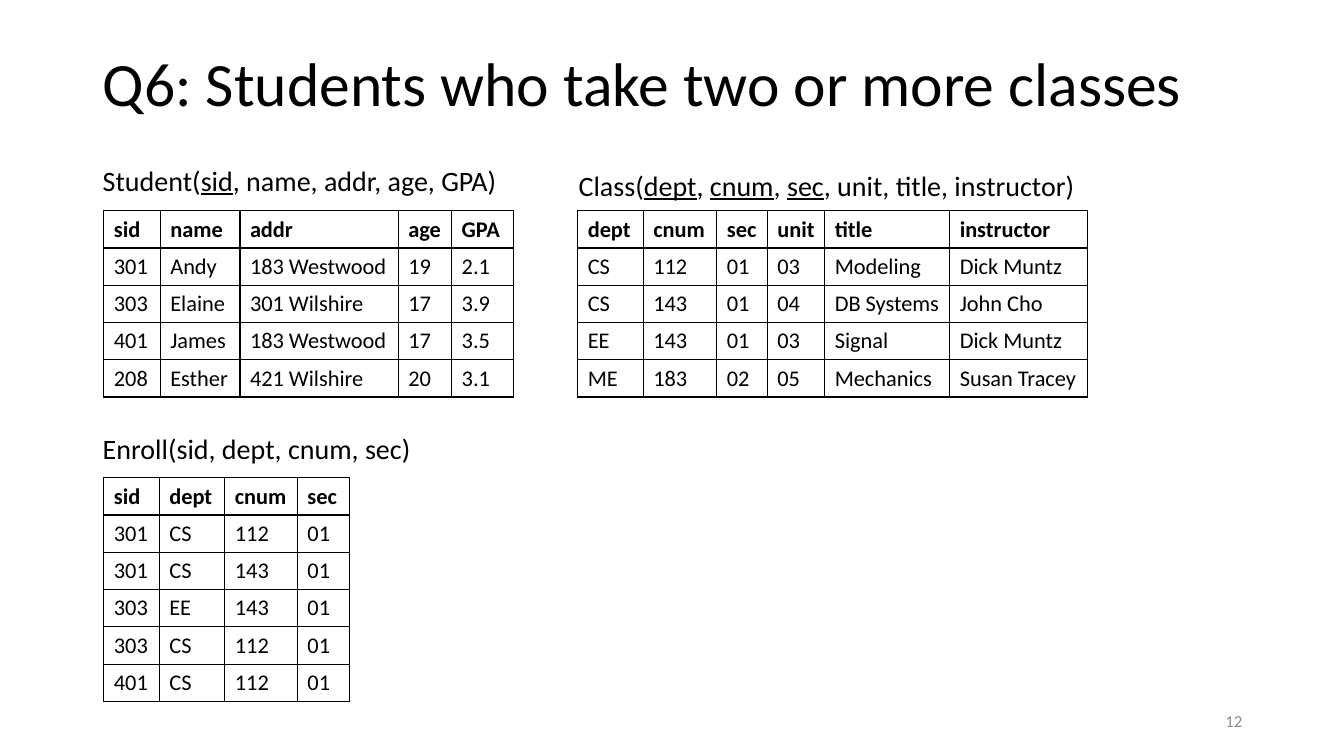
import pptx
import pptx.dml.color
import pptx.enum.text
import pptx.oxml
import pptx.oxml.ns
import pptx.util

PX = 9144  # EMU per px, 100 px to the inch
FONT = "Calibri"
COLORS = {"text": "000000", "border": "000000", "number": "8C8C8C"}
ROW_HEIGHT = 37
ALIGN = pptx.enum.text.PP_ALIGN
MIDDLE = pptx.enum.text.MSO_ANCHOR.MIDDLE

STUDENTS = [
    ("301", "Andy", "183 Westwood", "19", "2.1"),
    ("303", "Elaine", "301 Wilshire", "17", "3.9"),
    ("401", "James", "183 Westwood", "17", "3.5"),
    ("208", "Esther", "421 Wilshire", "20", "3.1"),
]
CLASSES = [
    ("CS", "112", "01", "03", "Modeling", "Dick Muntz"),
    ("CS", "143", "01", "04", "DB Systems", "John Cho"),
    ("EE", "143", "01", "03", "Signal", "Dick Muntz"),
    ("ME", "183", "02", "05", "Mechanics", "Susan Tracey"),
]
ENROLLMENTS = [
    ("301", "CS", "112", "01"),
    ("301", "CS", "143", "01"),
    ("303", "EE", "143", "01"),
    ("303", "CS", "112", "01"),
    ("401", "CS", "112", "01"),
]


def px(*lengths):
    return [pptx.util.Emu(n * PX) for n in lengths]


def set_font(p, size, color="text", bold=False):
    p.font.name = FONT
    p.font.size = pptx.util.Pt(size)
    p.font.bold = bold
    p.font.color.rgb = pptx.dml.color.RGBColor.from_string(COLORS[color])


def add_title(s, text, box):
    title = s.shapes.title
    title.left, title.top, title.width, title.height = px(*box)
    tf = title.text_frame
    tf.text = text
    tf.vertical_anchor = MIDDLE
    p = tf.paragraphs[0]
    p.alignment = ALIGN.LEFT
    p.line_spacing = 0.9
    set_font(p, 44)


def add_text_box(s, box):
    tf = s.shapes.add_textbox(*px(*box)).text_frame
    tf.word_wrap = True
    return tf


def add_schema(s, name, attributes, keys, box):
    """Write name(attributes) with the key attributes underlined."""
    p = add_text_box(s, box).paragraphs[0]
    set_font(p, 20)
    p.add_run().text = name + "("
    for i, attribute in enumerate(attributes):
        if i:
            p.add_run().text = ", "
        r = p.add_run()
        r.text = attribute
        if attribute in keys:
            r.font.underline = True
    p.add_run().text = ")"


def set_borders(cell):
    tc_pr = cell._tc.get_or_add_tcPr()
    for i, side in enumerate("LRTB"):
        line = pptx.oxml.parse_xml(
            f'<a:ln{side} {pptx.oxml.ns.nsdecls("a")} w="12700"><a:solidFill>'
            f'<a:srgbClr val="{COLORS["border"]}"/></a:solidFill></a:ln{side}>')
        tc_pr.insert(i, line)


def add_table(s, rows, widths, left, top):
    box = px(left, top, sum(widths), ROW_HEIGHT * len(rows))
    table = s.shapes.add_table(len(rows), len(widths), *box).table
    table.horz_banding = False
    for column, width in zip(table.columns, widths):
        column.width = px(width)[0]
    for i, values in enumerate(rows):
        table.rows[i].height = px(ROW_HEIGHT)[0]
        for j, value in enumerate(values):
            cell = table.cell(i, j)
            cell.text = value
            cell.fill.background()
            set_font(cell.text_frame.paragraphs[0], 16, bold=i == 0)
            set_borders(cell)


def add_relation(s, name, attributes, keys, rows, label, widths, corner):
    """Add a schema line and the table whose header repeats its attributes."""
    names = attributes.split()
    add_schema(s, name, names, keys, label)
    add_table(s, [names] + rows, widths, *corner)


def add_slide_number(s, number, box):
    tf = add_text_box(s, box)
    tf.text = number
    tf.vertical_anchor = MIDDLE
    tf.paragraphs[0].alignment = ALIGN.RIGHT
    set_font(tf.paragraphs[0], 12, "number")


def main():
    prs = pptx.Presentation()
    prs.slide_width, prs.slide_height = px(1333, 750)
    s = prs.slides.add_slide(prs.slide_layouts[5])
    add_title(s, "Q6: Students who take two or more classes", (92, 40, 1150, 91))
    add_relation(s, "Student", "sid name addr age GPA", {"sid"}, STUDENTS,
                 (92, 157, 416, 43), (56, 79, 157, 53, 61), (103, 209))
    add_relation(s, "Class", "dept cnum sec unit title instructor",
                 {"dept", "cnum", "sec"}, CLASSES,
                 (564, 162, 601, 43), (65, 73, 50, 57, 124, 137), (573, 209))
    add_relation(s, "Enroll", "sid dept cnum sec", set(), ENROLLMENTS,
                 (92, 423, 402, 43), (55, 65, 72, 52), (103, 474))
    add_slide_number(s, "12", (942, 695, 300, 40))
    prs.save("out.pptx")


if __name__ == "__main__":
    main()
